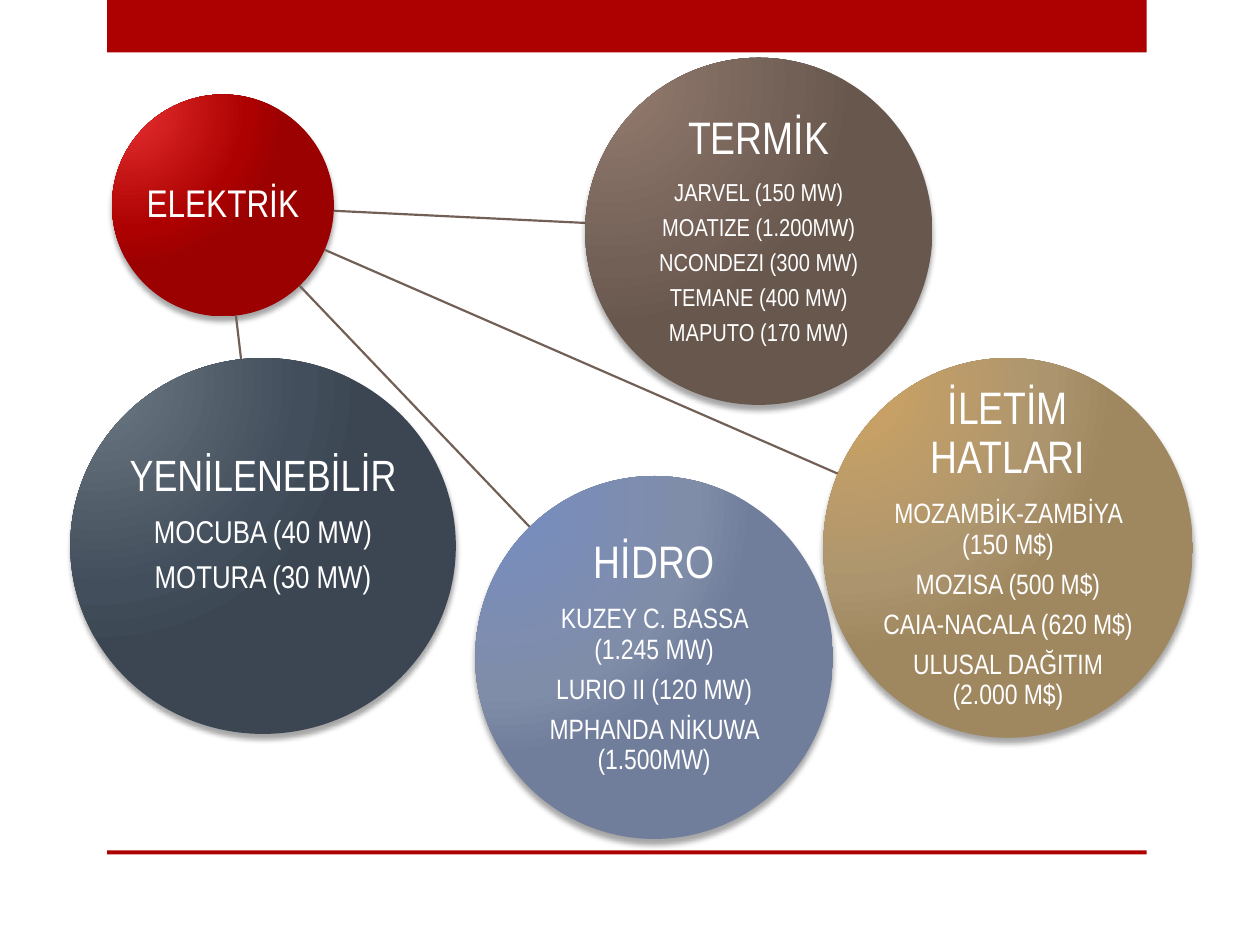
import math

import pptx
import pptx.dml.color
import pptx.enum.shapes
import pptx.enum.text
import pptx.oxml
import pptx.oxml.ns
import pptx.util
from pptx.dml.color import RGBColor
from pptx.util import Pt

RED = RGBColor(0xAD, 0x01, 0x01)
RED_LIGHT = RGBColor(0xE6, 0x2F, 0x2F)
RED_DARK = RGBColor(0x9C, 0x01, 0x01)
BROWN = RGBColor(0x72, 0x60, 0x56)
BROWN_LIGHT = RGBColor(0x94, 0x7B, 0x6F)
BROWN_DARK = RGBColor(0x67, 0x57, 0x4D)
GOLD = RGBColor(0xAC, 0x95, 0x6E)
GOLD_LIGHT = RGBColor(0xCE, 0xA3, 0x63)
GOLD_DARK = RGBColor(0x9F, 0x87, 0x5F)
BLUE = RGBColor(0x80, 0x8D, 0xA9)
BLUE_LIGHT = RGBColor(0x77, 0x8D, 0xC1)
BLUE_DARK = RGBColor(0x70, 0x7E, 0x9B)
SLATE = RGBColor(0x42, 0x4E, 0x5B)
SLATE_LIGHT = RGBColor(0x6D, 0x77, 0x84)
SLATE_DARK = RGBColor(0x3B, 0x46, 0x52)
WHITE = RGBColor(0xFF, 0xFF, 0xFF)

HUB_BOX = (64, 54, 126.8, 126.8)

# box, gradient, title, title size, projects, project size, bottom inset
BRANCHES = [
    ((334.4, 33, 198.4, 198.4), (BROWN_LIGHT, BROWN, BROWN_DARK), "TERMİK", 26,
     ["JARVEL (150 MW)", "MOATIZE (1.200MW)", "NCONDEZI (300 MW)",
      "TEMANE (400 MW)", "MAPUTO (170 MW)"], 14, 1.6),
    ((470.4, 204.6, 211.2, 217), (GOLD_LIGHT, GOLD, GOLD_DARK), "İLETİM HATLARI", 26,
     ["MOZAMBİK-ZAMBİYA (150 M$)", "MOZISA (500 M$)", "CAIA-NACALA (620 M$)",
      "ULUSAL DAĞITIM (2.000 M$)"], 16, 1.6),
    ((271.6, 272, 204.5, 207.4), (BLUE_LIGHT, BLUE, BLUE_DARK), "HİDRO", 26,
     ["KUZEY C. BASSA (1.245 MW)", "LURIO II (120 MW)", "MPHANDA NİKUWA (1.500MW)"],
     16, 1.6),
    ((40.2, 204.6, 220.3, 214.8), (SLATE_LIGHT, SLATE, SLATE_DARK), "YENİLENEBİLİR", 25,
     ["MOCUBA (40 MW)", "MOTURA (30 MW)"], 18, 26.5),
]


def center(box):
    left, top, width, height = box
    return left + width / 2, top + height / 2


def edge_point(box, target):
    """Point where the ellipse in box meets the line from its center to target."""
    x, y = center(box)
    dx, dy = target[0] - x, target[1] - y
    scale = 1 / math.hypot(dx / (box[2] / 2), dy / (box[3] / 2))
    return x + dx * scale, y + dy * scale


class Diagram:
    font = "Arial Narrow"
    inset = 1.6
    line_spacing = 0.9
    gap_ratio = 0.35

    def __init__(self, slide):
        self.slide = slide

    def bar(self, left, top, width, height):
        bar = self.slide.shapes.add_shape(
            pptx.enum.shapes.MSO_SHAPE.RECTANGLE,
            Pt(left), Pt(top), Pt(width), Pt(height))
        bar.shadow.inherit = False
        bar.fill.solid()
        bar.fill.fore_color.rgb = RED
        bar.line.fill.background()

    def spoke(self, from_box, to_box):
        start = edge_point(from_box, center(to_box))
        end = edge_point(to_box, center(from_box))
        spoke = self.slide.shapes.add_connector(
            pptx.enum.shapes.MSO_CONNECTOR.STRAIGHT,
            *(Pt(length) for length in start + end))
        spoke.line.color.rgb = BROWN
        spoke.line.width = Pt(1.25)
        properties = spoke._element.spPr
        properties.append(properties.makeelement(pptx.oxml.ns.qn("a:effectLst"), {}))

    def ball(self, box, colors, lines, bottom_inset=inset):
        """Shaded circle holding (text, size) lines; a single line never wraps."""
        ball = self.slide.shapes.add_shape(
            pptx.enum.shapes.MSO_SHAPE.OVAL, *(Pt(length) for length in box))
        self.shade(ball, colors)
        frame = ball.text_frame
        frame.word_wrap = len(lines) > 1
        frame.vertical_anchor = pptx.enum.text.MSO_ANCHOR.MIDDLE
        frame.margin_left = frame.margin_right = frame.margin_top = Pt(self.inset)
        frame.margin_bottom = Pt(bottom_inset)
        frame.text = "\n".join(text for text, _ in lines)
        for paragraph, (_, size) in zip(frame.paragraphs, lines):
            paragraph.alignment = pptx.enum.text.PP_ALIGN.CENTER
            paragraph.line_spacing = self.line_spacing
            paragraph.space_after = Pt(self.gap_ratio * size)
            font = paragraph.runs[0].font
            font.name = self.font
            font.size = Pt(size)
            font.color.rgb = WHITE

    def shade(self, ball, colors):
        """Radial gradient lit from the upper left, with a soft shadow below."""
        namespace = pptx.oxml.ns.nsdecls("a")
        stops = "".join(
            f'<a:gs pos="{position}"><a:srgbClr val="{color}"/></a:gs>'
            for position, color in zip((0, 76000, 100000), colors))
        properties = ball._element.spPr
        properties.append(pptx.oxml.parse_xml(
            f'<a:gradFill {namespace} rotWithShape="1"><a:gsLst>{stops}</a:gsLst>'
            '<a:path path="circle"><a:fillToRect l="15000" t="15000" r="100000"'
            ' b="100000"/></a:path></a:gradFill>'))
        ball.line.fill.background()
        ball.shadow.inherit = False
        properties.find(pptx.oxml.ns.qn("a:effectLst")).append(pptx.oxml.parse_xml(
            f'<a:outerShdw {namespace} blurRad="{Pt(3)}" dist="{Pt(3)}" dir="5400000"'
            ' rotWithShape="0"><a:srgbClr val="000000"><a:alpha val="35000"/>'
            '</a:srgbClr></a:outerShdw>'))


def main():
    presentation = pptx.Presentation()
    presentation.slide_width = Pt(720)
    presentation.slide_height = Pt(540)
    slide = presentation.slides.add_slide(presentation.slide_layouts[6])
    diagram = Diagram(slide)
    diagram.bar(61.2, 0, 594, 30)
    diagram.bar(61.2, 486, 594, 2.2)
    diagram.ball(HUB_BOX, (RED_LIGHT, RED, RED_DARK), [("ELEKTRİK", 22)])
    for box, colors, title, title_size, projects, project_size, bottom in BRANCHES:
        diagram.spoke(HUB_BOX, box)
        lines = [(title, title_size)] + [(project, project_size) for project in projects]
        diagram.ball(box, colors, lines, bottom)
    presentation.save("out.pptx")


if __name__ == "__main__":
    main()
